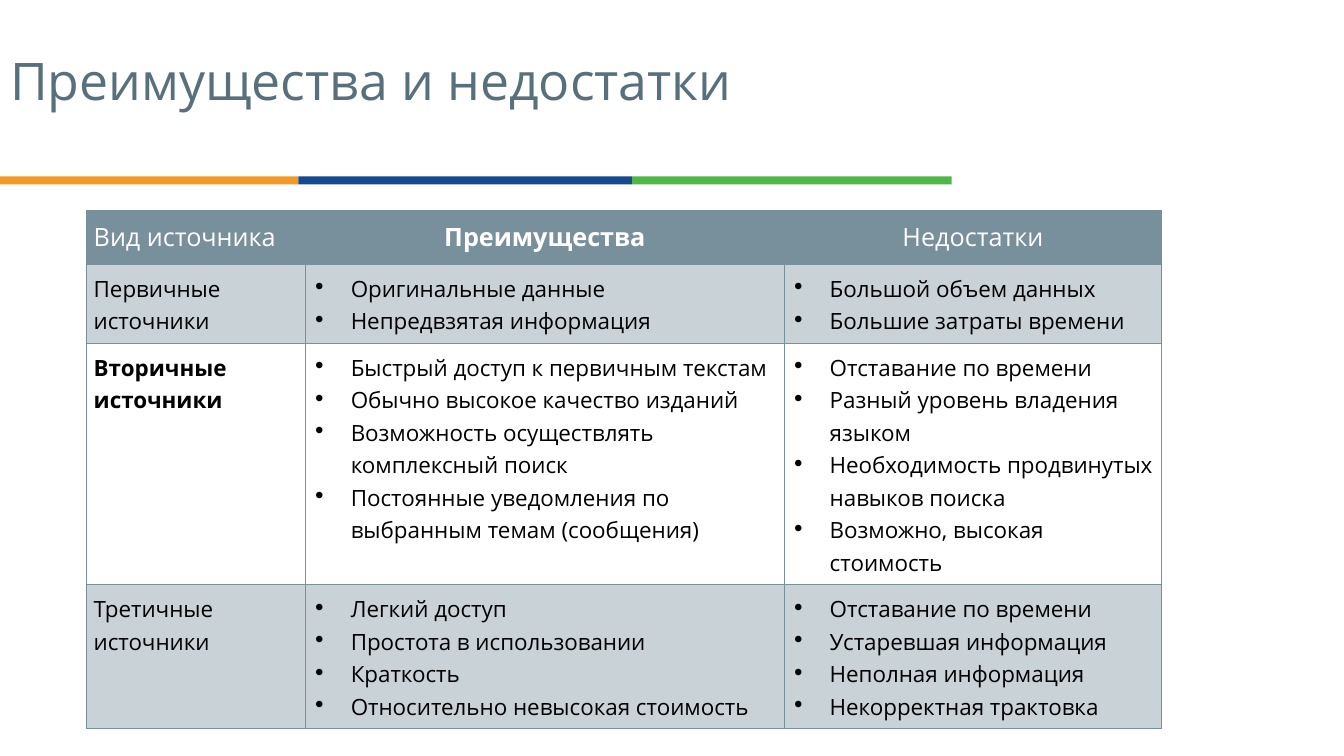
from dataclasses import dataclass

import pptx
import pptx.dml.color
import pptx.enum.shapes
import pptx.enum.text
import pptx.oxml
import pptx.oxml.ns
import pptx.util
from pptx.util import Inches


@dataclass(frozen=True)
class Theme:
    font: str = "Open Sans"
    title: str = "586F7C"
    slate: str = "78909C"
    white: str = "FFFFFF"
    black: str = "000000"
    title_size: int = 37
    header_size: int = 18
    body_size: int = 16
    band_opacity: int = 40


@dataclass(frozen=True)
class Stripe:
    left: float
    width: float
    color: str


@dataclass(frozen=True)
class SourceRow:
    kind: str
    pros: list[str]
    cons: list[str]
    height: float
    bold: bool = False
    banded: bool = True


THEME = Theme()
STRIPES = [
    Stripe(0, 2.96, "F49925"),
    Stripe(2.96, 3.31, "154A90"),
    Stripe(6.27, 3.17, "4EB748"),
]
COLUMN_WIDTHS = [2.17, 4.75, 3.74]
HEADER_HEIGHT = 0.53
HEADERS = ["Вид источника", "Преимущества", "Недостатки"]
SOURCES = [
    SourceRow(
        "Первичные источники",
        ["Оригинальные данные", "Непредвзятая информация"],
        ["Большой объем данных", "Большие затраты времени"],
        height=0.78,
    ),
    SourceRow(
        "Вторичные источники",
        ["Быстрый доступ к первичным текстам",
         "Обычно высокое качество изданий",
         "Возможность осуществлять комплексный поиск",
         "Постоянные уведомления по выбранным темам (сообщения)"],
        ["Отставание по времени",
         "Разный уровень владения языком",
         "Необходимость продвинутых навыков поиска",
         "Возможно, высокая стоимость"],
        height=2.39, bold=True, banded=False,
    ),
    SourceRow(
        "Третичные источники",
        ["Легкий доступ", "Простота в использовании", "Краткость",
         "Относительно невысокая стоимость"],
        ["Отставание по времени", "Устаревшая информация",
         "Неполная информация", "Некорректная трактовка"],
        height=1.43,
    ),
]


def rgb(color: str) -> pptx.dml.color.RGBColor:
    return pptx.dml.color.RGBColor.from_string(color)


def xml(markup: str):
    """Parse one DrawingML element, adding its namespace."""
    tag, rest = markup[1:].split(" ", 1)
    return pptx.oxml.parse_xml(f"<{tag} {pptx.oxml.ns.nsdecls('a')} {rest}")


def format_runs(para, size: int, color: str, bold: bool = False) -> None:
    for span in para.runs:
        span.font.name = THEME.font
        span.font.size = pptx.util.Pt(size)
        span.font.bold = bold
        span.font.color.rgb = rgb(color)


def add_bullet(para) -> None:
    properties = para._p.get_or_add_pPr()
    properties.set("marL", str(Inches(0.38)))
    properties.set("indent", str(-Inches(0.38)))
    properties.append(xml(f'<a:buClr ><a:srgbClr val="{THEME.black}"/></a:buClr>'))
    properties.append(xml('<a:buChar char="∙"/>'))


def style_cell(cell, filled: bool, opacity: int = 100) -> None:
    """Set margins, borders and fill; borders come first in the XML."""
    cell.margin_left = cell.margin_right = Inches(0.07)
    cell.margin_top = cell.margin_bottom = Inches(0.07)
    properties = cell._tc.get_or_add_tcPr()
    for side in "LRTB":
        properties.append(xml(
            f'<a:ln{side} w="{pptx.util.Pt(0.75)}"><a:solidFill>'
            f'<a:srgbClr val="{THEME.slate}"/></a:solidFill></a:ln{side}>'))
    if not filled:
        cell.fill.background()
        return
    cell.fill.solid()
    cell.fill.fore_color.rgb = rgb(THEME.slate)
    if opacity < 100:
        color = properties.find(pptx.oxml.ns.qn("a:solidFill"))[0]
        color.append(xml(f'<a:alpha val="{opacity * 1000}"/>'))


def write_cell(cell, lines: list[str], size: int, color: str, bold: bool = False,
               bullets: bool = False, centered: bool = False) -> None:
    cell.text_frame.text = "\n".join(lines)
    for para in cell.text_frame.paragraphs:
        if bullets:
            add_bullet(para)
        para.line_spacing = 1.07
        if centered:
            para.alignment = pptx.enum.text.PP_ALIGN.CENTER
        format_runs(para, size, color, bold)


def add_stripe(page, stripe: Stripe) -> None:
    box = page.shapes.add_shape(
        pptx.enum.shapes.MSO_SHAPE.RECTANGLE, Inches(stripe.left), Inches(1.75),
        Inches(stripe.width), Inches(0.08))
    box.shadow.inherit = False
    box.fill.solid()
    box.fill.fore_color.rgb = rgb(stripe.color)
    box.line.fill.background()


def add_title(page, text: str) -> None:
    title = page.shapes.title
    title.left, title.top = Inches(0), Inches(0.24)
    title.width, title.height = Inches(8.99), Inches(1.18)
    frame = title.text_frame
    frame.text = text
    frame.word_wrap = True
    frame.vertical_anchor = pptx.enum.text.MSO_ANCHOR.MIDDLE
    para = frame.paragraphs[0]
    para.alignment = pptx.enum.text.PP_ALIGN.LEFT
    para.line_spacing = 0.9
    format_runs(para, THEME.title_size, THEME.title)


def add_source_table(page) -> None:
    heights = [HEADER_HEIGHT] + [source.height for source in SOURCES]
    table = page.shapes.add_table(
        len(heights), len(COLUMN_WIDTHS), Inches(0.86), Inches(2.09),
        Inches(sum(COLUMN_WIDTHS)), Inches(sum(heights))).table
    table.first_row = table.horz_banding = False
    for column, width in zip(table.columns, COLUMN_WIDTHS):
        column.width = Inches(width)
    for row, height in zip(table.rows, heights):
        row.height = Inches(height)

    # Header row
    for index, header in enumerate(HEADERS):
        cell = table.cell(0, index)
        style_cell(cell, filled=True)
        write_cell(cell, [header], THEME.header_size, THEME.white,
                   bold=index == 1, centered=index > 0)

    # One row per kind of source
    for number, source in enumerate(SOURCES, start=1):
        for index, lines in enumerate([[source.kind], source.pros, source.cons]):
            cell = table.cell(number, index)
            style_cell(cell, source.banded, THEME.band_opacity)
            write_cell(cell, lines, THEME.body_size, THEME.black,
                       bold=source.bold and index == 0, bullets=index > 0)


def main() -> None:
    deck = pptx.Presentation()
    deck.slide_width, deck.slide_height = Inches(13.33), Inches(7.5)
    page = deck.slides.add_slide(deck.slide_layouts[5])
    for stripe in STRIPES:
        add_stripe(page, stripe)
    add_title(page, "Преимущества и недостатки")
    add_source_table(page)
    deck.save("out.pptx")


if __name__ == "__main__":
    main()
